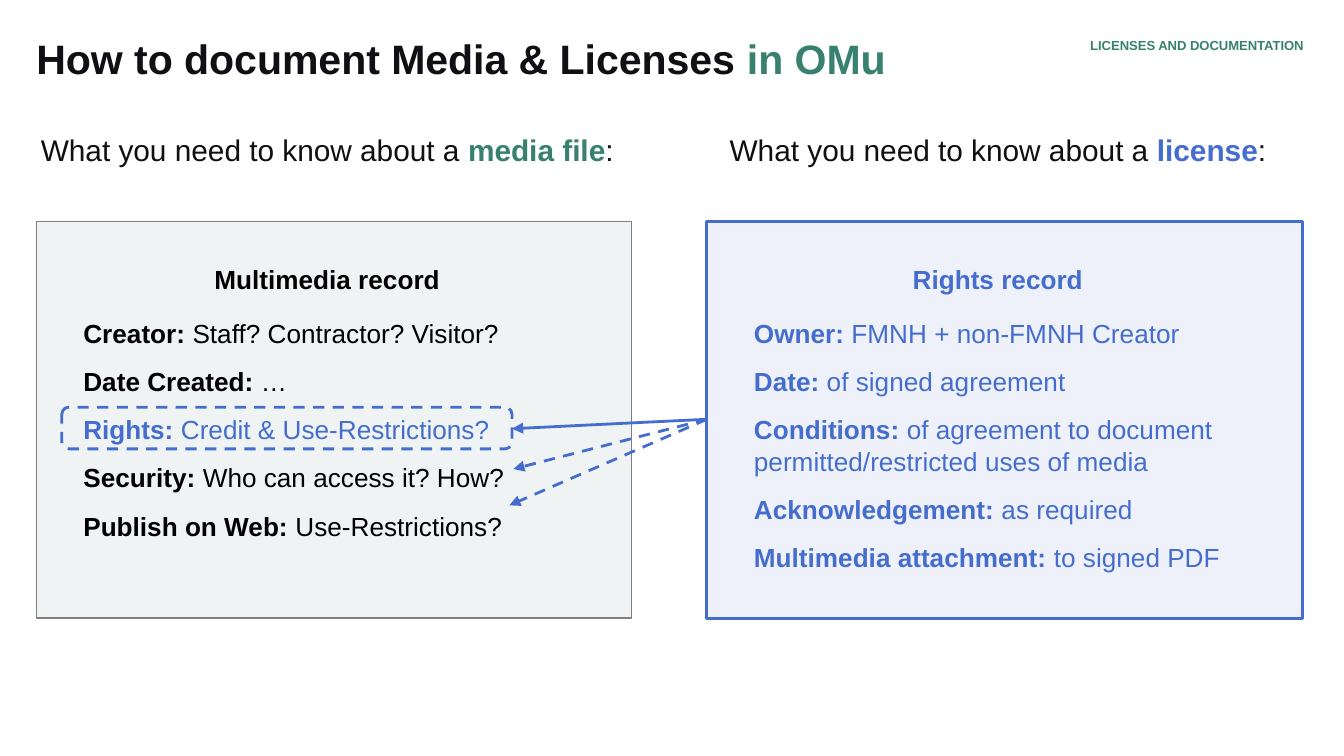
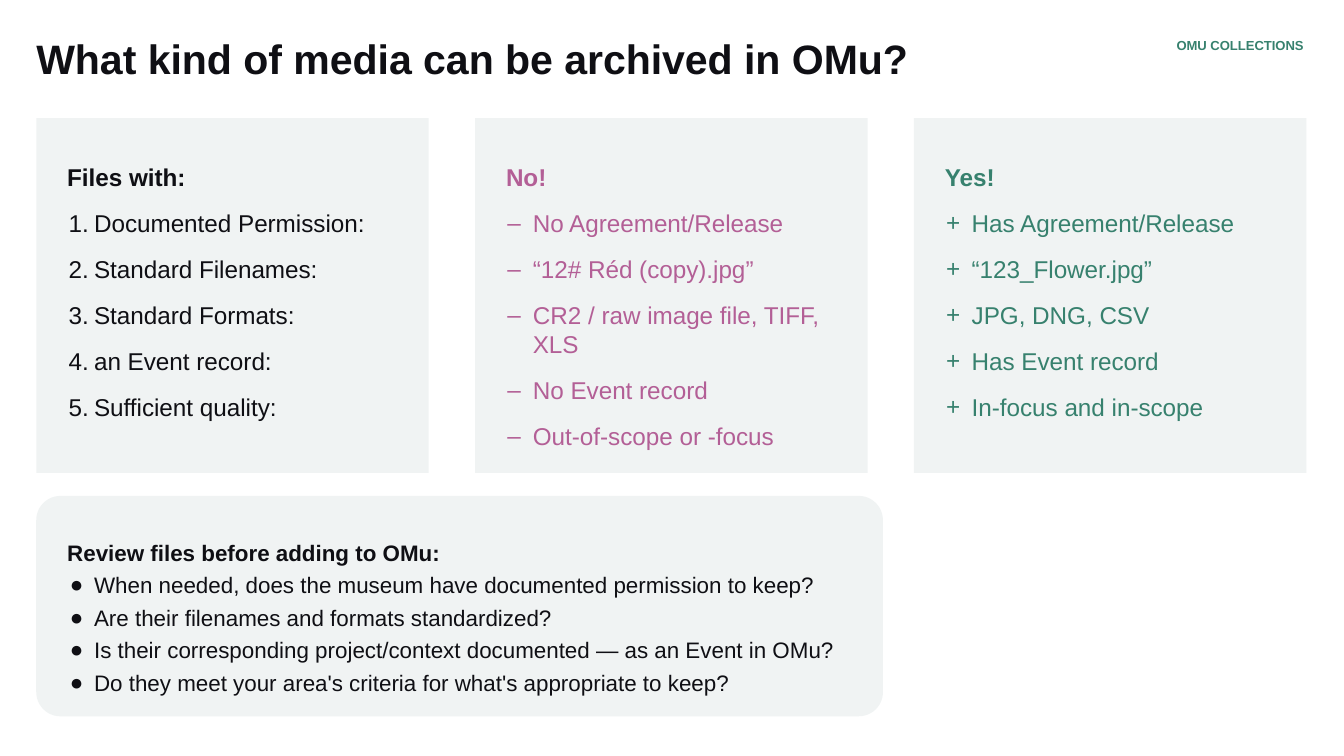
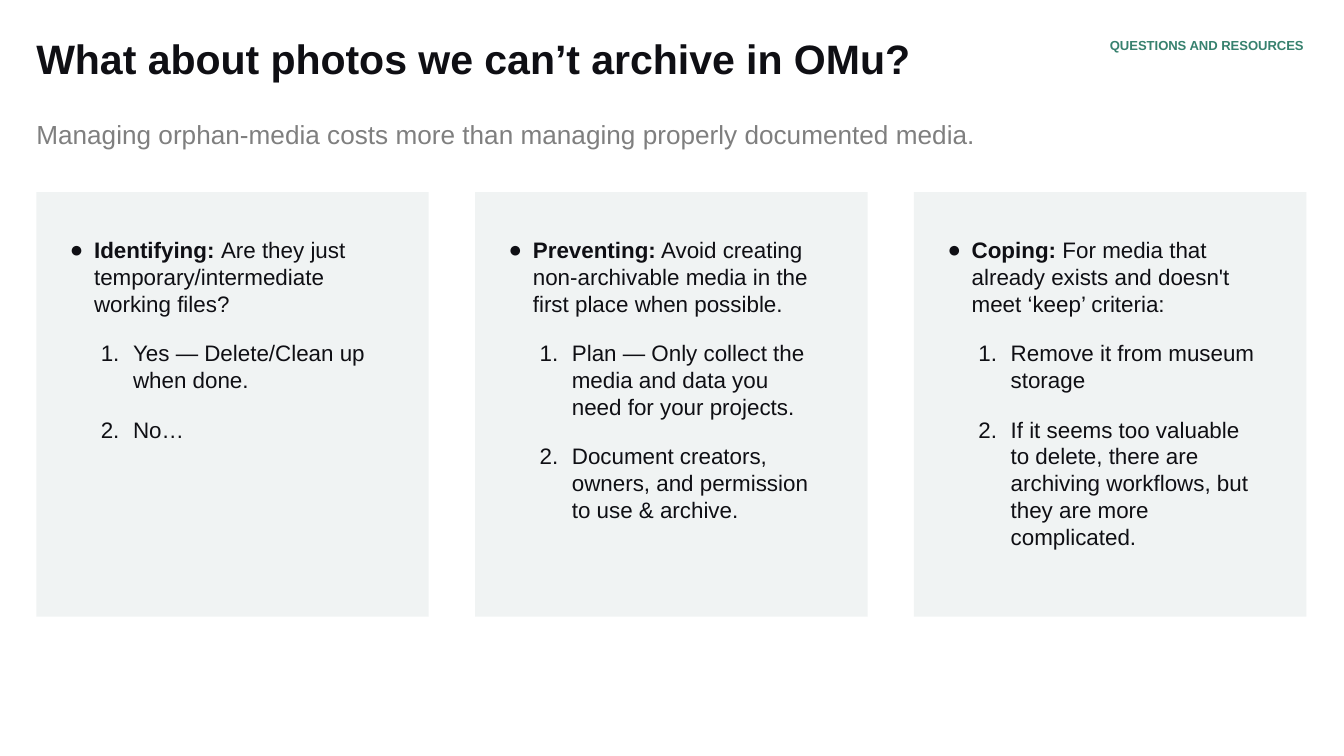
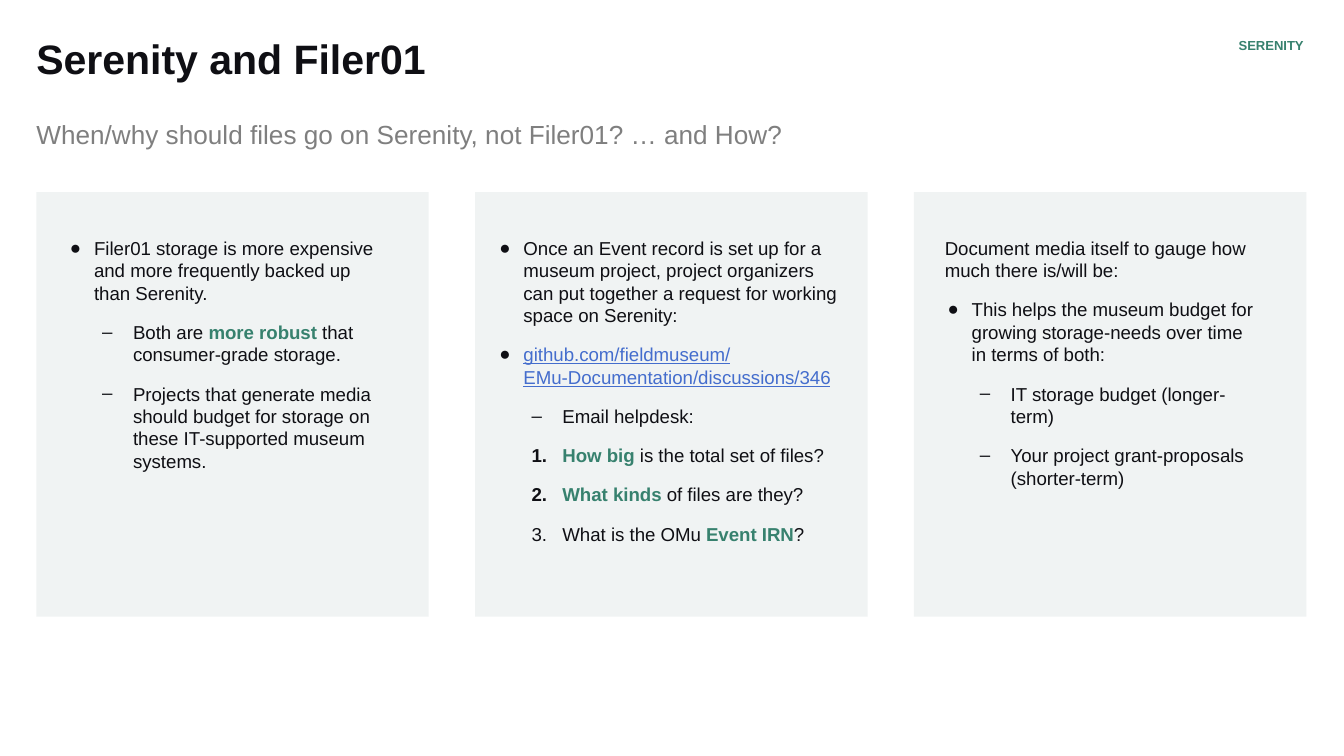
"""Build four slides on documenting and archiving museum media."""
from lxml import etree
from pptx import Presentation
from pptx.dml.color import RGBColor
from pptx.enum.dml import MSO_LINE
from pptx.enum.shapes import MSO_CONNECTOR, MSO_SHAPE
from pptx.enum.text import MSO_ANCHOR, MSO_AUTO_SIZE, PP_ALIGN
from pptx.oxml.ns import qn
from pptx.util import Inches, Pt

RECT, ROUND = MSO_SHAPE.RECTANGLE, MSO_SHAPE.ROUNDED_RECTANGLE
LEFT, CENTER, RIGHT = PP_ALIGN.LEFT, PP_ALIGN.CENTER, PP_ALIGN.RIGHT
STRAIGHT, DASH = MSO_CONNECTOR.STRAIGHT, MSO_LINE.DASH
TOP, NO_FIT = MSO_ANCHOR.TOP, MSO_AUTO_SIZE.NONE

FONT = "Arial"
INK, BLACK, GRAY, PALE = "0F0F14", "000000", "7F7F7F", "F0F3F3"
GREEN, BLUE, PINK = "37816E", "446DCD", "B35F96"

WIDTH = 10
HEIGHT = WIDTH * 9 / 16
MARGIN, TITLE_TOP, BODY_TOP, PANEL_TOP = 0.27, 0.29, 0.88, 1.43
HALF_W, HALF_STEP, HALF_TOP, HALF_H, HALF_PAD = 4.43, 4.99, 1.65, 2.95, 0.35
THIRD_W, THIRD_PAD, LAST_THIRD = 2.92, 0.23, 6.8
THIRD_STEP = (LAST_THIRD - MARGIN) / 2
TEXT_W = THIRD_W - 2 * THIRD_PAD - 0.01

# kind: (bullet, level, left indent, hanging indent)
KINDS = {
    "plain": (None, 0, 0, 0),
    "center": (None, 0, 0, 0),
    "lead": (None, 0, 0, 0),
    "dot": ("●", 0, 0.2, 0.18),
    "num": ("1.", 0, 0.2, 0.19),
    "dash": ("–", 1, 0.2, 0.19),
    "plus": ("+", 1, 0.2, 0.19),
    "subnum": ("1.", 1, 0.49, 0.24),
    "subdash": ("–", 1, 0.49, 0.23),
    "step": ("1.", 0, 0.49, 0.23),
}

# A paragraph is (kind, run, ...); a run is text, or (text, colour) when bold.
RECORDS = [
    {"topic": ("media file", GREEN), "color": BLACK, "fill": PALE, "line": (GRAY, 0.75),
     "text": [
         ("center", ("Multimedia record", None)),
         ("lead", ("Creator:", None), " Staff? Contractor? Visitor?"),
         ("plain", ("Date Created:", None), " …"),
         ("plain", ("Rights:", BLUE), (" Credit & Use-Restrictions?", BLUE, "regular")),
         ("plain", ("Security:", None), " Who can access it? How?"),
         ("plain", ("Publish on Web:", None), " Use-Restrictions?")]},
    {"topic": ("license", BLUE), "color": BLUE, "fill": BLUE, "alpha": 9, "line": (BLUE, 1.5),
     "text": [
         ("center", ("Rights record", None)),
         ("lead", ("Owner:", None), " FMNH + non-FMNH Creator"),
         ("plain", ("Date:", None), " of signed agreement"),
         ("plain", ("Conditions:", None),
          " of agreement to document permitted/restricted uses of media"),
         ("plain", ("Acknowledgement:", None), " as required"),
         ("plain", ("Multimedia attachment:", None), " to signed PDF")]},
]
RIGHTS_BOX = (0.46, 3.03, 3.35, 0.31)
ARROW_START = (MARGIN + HALF_STEP, 3.12)
ARROWS = [((3.81, 3.19), None), ((3.82, 3.49), DASH), ((3.79, 3.76), DASH)]

CRITERIA = [
    (INK, "Files with:", "num",
     ["Documented Permission:", "Standard Filenames:", "Standard Formats:",
      "an Event record:", "Sufficient quality:"]),
    (PINK, "No!", "dash",
     ["No Agreement/Release", "“12# Réd (copy).jpg”", "CR2 / raw image file, TIFF, XLS",
      "No Event record", "Out-of-scope or -focus"]),
    (GREEN, "Yes!", "plus",
     ["Has Agreement/Release", "“123_Flower.jpg”", "JPG, DNG, CSV",
      "Has Event record", "In-focus and in-scope"]),
]
REVIEW = [
    ("plain", ("Review files before adding to OMu:", None)),
    ("dot", "When needed, does the museum have documented permission to keep?"),
    ("dot", "Are their filenames and formats standardized?"),
    ("dot", "Is their corresponding project/context documented — as an Event in OMu?"),
    ("dot", "Do they meet your area's criteria for what's appropriate to keep?"),
]

ORPHANS = [
    [("dot", ("Identifying: ", None), "Are they just temporary/intermediate working files?"),
     ("subnum", "Yes — Delete/Clean up when done."),
     ("subnum", "No…")],
    [("dot", ("Preventing:", None),
      " Avoid creating non-archivable media in the first place when possible."),
     ("subnum", "Plan — Only collect the media and data you need for your projects."),
     ("subnum", "Document creators, owners, and permission to use & archive.")],
    [("dot", ("Coping:", None),
      " For media that already exists and doesn't meet ‘keep’ criteria:"),
     ("subnum", "Remove it from museum storage"),
     ("subnum", "If it seems too valuable to delete, there are archiving workflows, "
      "but they are more complicated.")],
]
STORAGE = [
    [("dot", "Filer01 storage is more expensive and more frequently backed up than Serenity."),
     ("subdash", "Both are ", ("more robust", GREEN), " that consumer-grade storage."),
     ("subdash", "Projects that generate media should budget for storage on these "
      "IT-supported museum systems.")],
    [("dot", "Once an Event record is set up for a museum project, project organizers "
      "can put together a request for working space on Serenity:"),
     ("dot", ("github.com/fieldmuseum/\nEMu-Documentation/discussions/346", BLUE, "link")),
     ("subdash", "Email helpdesk:"),
     ("step", ("How big", GREEN), " is the total set of files?"),
     ("step", ("What kinds", GREEN), " of files are they?"),
     ("step", "What is the OMu ", ("Event IRN", GREEN), "?")],
    [("plain", "Document media itself to gauge how much there is/will be:"),
     ("dot", "This helps the museum budget for growing storage-needs over time "
      "in terms of both:"),
     ("subdash", "IT storage budget (longer-term)"),
     ("subdash", "Your project grant-proposals (shorter-term)")],
]


def rgb(color):
    return RGBColor.from_string(color)


def add_bullet(p, kind, color):
    bullet, level, left, hang = KINDS[kind]
    p.level = level
    pPr = p._p.get_or_add_pPr()
    pPr.set("marL", str(Inches(left)))
    pPr.set("indent", str(-Inches(hang)))
    if not bullet:
        etree.SubElement(pPr, qn("a:buNone"))
        return
    clr = etree.SubElement(pPr, qn("a:buClr"))
    etree.SubElement(clr, qn("a:srgbClr"), val=color)
    etree.SubElement(pPr, qn("a:buFont"), typeface=FONT)
    if bullet == "1.":
        etree.SubElement(pPr, qn("a:buAutoNum"), type="arabicPeriod")
    else:
        etree.SubElement(pPr, qn("a:buChar"), char=bullet)


def add_run(p, run, size, base):
    text, color, style = (run, None, "regular") if isinstance(run, str) else (*run, "bold")[:3]
    for i, part in enumerate(text.split("\n")):
        if i:
            p.add_line_break()
        r = p.add_run()
        r.text = part
        r.font.name, r.font.size = FONT, Pt(size)
        r.font.bold = style == "bold"
        r.font.color.rgb = rgb(color or base)
        if style == "link":
            r.font.underline = True


def write(sp, box, paragraphs, size, color=INK, gap=0, align=LEFT, top=0.1, bottom=0.1,
          right=0.1, spacing=1.0):
    sp.left, sp.top, sp.width, sp.height = map(Inches, box)
    sp._element.getparent().append(sp._element)
    tf = sp.text_frame
    tf.word_wrap, tf.auto_size, tf.vertical_anchor = True, NO_FIT, TOP
    tf.margin_left, tf.margin_top = 0, Inches(top)
    tf.margin_right, tf.margin_bottom = Inches(right), Inches(bottom)
    for i, (kind, *runs) in enumerate(paragraphs):
        p = tf.add_paragraph() if i else tf.paragraphs[0]
        add_bullet(p, kind, color)
        p.alignment = CENTER if kind == "center" else align
        p.line_spacing = spacing
        p.space_before = Pt(0 if i == 0 else 12 if kind == "lead" else gap)
        p.space_after = Pt(0)
        for run in runs:
            add_run(p, run, size, color)


def style_line(line, color, width, dash):
    line.color.rgb = rgb(color)
    line.width = Pt(width)
    if dash:
        line.dash_style = dash


def add_panel(s, box, fill=PALE, line=None, shape=RECT, alpha=None, radius=None, dash=None):
    sp = s.shapes.add_shape(shape, *map(Inches, box))
    sp.shadow.inherit = False
    if radius:
        sp.adjustments[0] = radius
    if fill:
        sp.fill.solid()
        sp.fill.fore_color.rgb = rgb(fill)
    else:
        sp.fill.background()
    if alpha:
        clr = sp._element.spPr.find(qn("a:solidFill")).find(qn("a:srgbClr"))
        etree.SubElement(clr, qn("a:alpha"), val=str(alpha * 1000))
    if line:
        style_line(sp.line, *line, dash)
    else:
        sp.line.fill.background()


def add_arrow(s, start, end, dash):
    arrow = s.shapes.add_connector(STRAIGHT, *map(Inches, (*start, *end)))
    style_line(arrow.line, BLUE, 1.5, dash)
    spPr = arrow._element.spPr
    etree.SubElement(spPr.find(qn("a:ln")), qn("a:tailEnd"), type="triangle")
    etree.SubElement(spPr, qn("a:effectLst"))


def add_slide(prs, tag, *title):
    s = prs.slides.add_slide(prs.slide_layouts.get_by_name("Comparison"))
    write(s.shapes.title, (MARGIN, TITLE_TOP, 7.99, 0.59),
          [("plain", *title)], 22, top=0, spacing=0.9)
    sp = s.shapes.add_textbox(0, 0, 0, 0)
    write(sp, (7.57, TITLE_TOP, 2.13, 0.16), [("plain", (tag, GREEN))], 7,
          align=RIGHT, top=0, right=0, spacing=0.9)
    bodies = [ph for ph in s.placeholders if ph.placeholder_format.idx]
    return s, bodies


def add_records(prs):
    s, bodies = add_slide(prs, "LICENSES AND DOCUMENTATION",
                          ("How to document Media & Licenses ", INK), ("in OMu", GREEN))
    for i, rec in enumerate(RECORDS):
        x = MARGIN + i * HALF_STEP
        add_panel(s, (x, HALF_TOP, HALF_W, HALF_H), rec["fill"], rec["line"],
                  alpha=rec.get("alpha"))
        write(bodies[2 * i], (x, BODY_TOP, HALF_W, 0.61),
              [("center", "What you need to know about a ", rec["topic"], ":")], 16)
        write(bodies[2 * i + 1], (x + HALF_PAD, 1.86, HALF_W - 2 * HALF_PAD, 2.52),
              rec["text"], 14, rec["color"], gap=9)
    add_panel(s, RIGHTS_BOX, None, (BLUE, 1.5), ROUND, radius=0.17, dash=DASH)
    for end, dash in ARROWS:
        add_arrow(s, ARROW_START, end, dash)


def add_criteria(prs):
    s, bodies = add_slide(prs, "OMU COLLECTIONS",
                          ("What kind of media can be archived in OMu?", INK))
    for i, (color, head, kind, items) in enumerate(CRITERIA):
        x = MARGIN + i * THIRD_STEP
        add_panel(s, (x, BODY_TOP, THIRD_W, 2.64))
        write(bodies[i], (x + THIRD_PAD, BODY_TOP + THIRD_PAD, TEXT_W, 2.15),
              [("plain", (head, None))] + [(kind, item) for item in items], 13, color, gap=9)
    add_panel(s, (MARGIN, 3.69, 6.3, 1.64), shape=ROUND, radius=0.11)
    write(bodies[3], (MARGIN + THIRD_PAD, 3.91, 6.3, 0.95), REVIEW, 12, gap=3)


def add_columns(prs, tag, title, subtitle, columns, size, gap, widen=0):
    s, bodies = add_slide(prs, tag, (title, INK))
    write(bodies[0], (MARGIN, BODY_TOP, 7.85, 0.47), [("plain", subtitle)], 14, GRAY, top=0)
    for i, column in enumerate(columns):
        x = MARGIN + i * THIRD_STEP
        extra = widen if i == 1 else 0
        add_panel(s, (x, PANEL_TOP, THIRD_W, 3.16))
        write(bodies[i + 1], (x + THIRD_PAD - extra, PANEL_TOP + THIRD_PAD,
                              TEXT_W + 2.7 * extra, 2.56), column, size, gap=gap)


def main():
    prs = Presentation()
    prs.slide_width, prs.slide_height = Inches(WIDTH), Inches(HEIGHT)
    add_records(prs)
    add_criteria(prs)
    add_columns(prs, "QUESTIONS AND RESOURCES", "What about photos we can’t archive in OMu?",
                "Managing orphan-media costs more than managing properly documented media.",
                ORPHANS, 12, 12)
    add_columns(prs, "SERENITY", "Serenity and Filer01",
                "When/why should files go on Serenity, not Filer01? … and How?",
                STORAGE, 10, 9, widen=0.07)
    prs.save("out.pptx")


if __name__ == "__main__":
    main()
